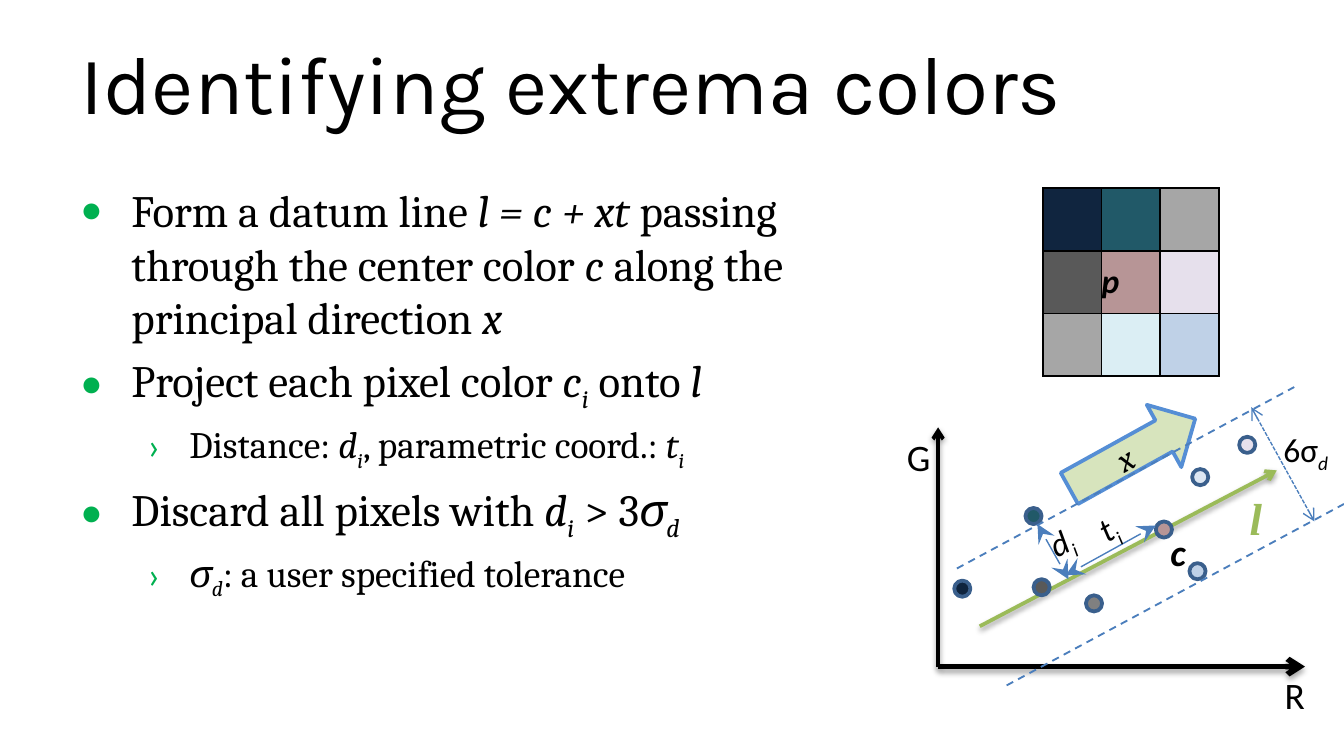
from lxml.etree import SubElement
from pptx import Presentation
from pptx.dml.color import RGBColor
from pptx.enum.dml import MSO_LINE as Dash
from pptx.enum.shapes import MSO_CONNECTOR as Connector, MSO_SHAPE as Shape
from pptx.enum.text import MSO_ANCHOR as Anchor, MSO_AUTO_SIZE as AutoSize, PP_ALIGN as Align
from pptx.oxml.ns import qn
from pptx.util import Inches, Pt

BLACK = RGBColor(0x00, 0x00, 0x00)
BULLET_GREEN = RGBColor(0x00, 0xB0, 0x50)
DATUM_GREEN = RGBColor(0x9B, 0xBB, 0x59)
ARROW_FILL = RGBColor(0xD7, 0xE4, 0xBD)
ARROW_EDGE = RGBColor(0x55, 0x8E, 0xD5)
DOT_EDGE = RGBColor(0x3A, 0x5F, 0x8C)
GUIDE_BLUE = RGBColor(0x4B, 0x7E, 0xBC)
NAVY = RGBColor(0x10, 0x25, 0x3F)
DEEP_NAVY = RGBColor(0x0F, 0x24, 0x3E)
TEAL = RGBColor(0x21, 0x59, 0x68)
SILVER = RGBColor(0xA6, 0xA6, 0xA6)
MID_GRAY = RGBColor(0x80, 0x80, 0x80)
DARK_GRAY = RGBColor(0x59, 0x59, 0x59)
ROSE = RGBColor(0xB7, 0x95, 0x96)
LILAC = RGBColor(0xE6, 0xE0, 0xEC)
AQUA = RGBColor(0xDB, 0xEE, 0xF4)
SKY = RGBColor(0xBF, 0xD1, 0xE7)
PALE_BLUE = RGBColor(0xDC, 0xE6, 0xF2)

# Run styles: regular, italic, italic subscript
REG, ITAL, SUB = "regular", "italic", "subscript"

# Indent, hanging indent, bullet and size for each outline level
LEVELS = [(0.38, -0.38, "•", 24), (0.81, -0.31, "›", 20)]
BULLETS = [
    (0, [("Form a datum line ", REG), ("l = c + xt", ITAL),
         (" passing through the center color ", REG), ("c", ITAL),
         (" along the principal direction ", REG), ("x", ITAL)]),
    (0, [("Project each pixel color ", REG), ("c", ITAL), ("i", SUB),
         (" onto ", REG), ("l", ITAL)]),
    (1, [("Distance: ", REG), ("d", ITAL), ("i", SUB),
         (", parametric coord.: ", REG), ("t", ITAL), ("i", SUB)]),
    (0, [("Discard all pixels with ", REG), ("d", ITAL), ("i", SUB),
         (" > 3", REG), ("σ", ITAL), ("d", SUB)]),
    (1, [("σ", ITAL), ("d", SUB), (": a user specified tolerance", REG)]),
]

PIXELS = [[NAVY, TEAL, SILVER], [DARK_GRAY, ROSE, LILAC], [SILVER, AQUA, SKY]]
DOT_SIZE = 0.12
COLOR_DOTS = [
    (8.6, 3.88, ROSE), (9.22, 3.25, LILAC), (8.87, 3.49, PALE_BLUE), (8.85, 4.19, SKY),
    (7.63, 3.78, TEAL), (7.1, 4.32, DEEP_NAVY), (7.69, 4.31, DARK_GRAY), (8.08, 4.43, MID_GRAY),
]


def box(*lengths):
    return [Inches(length) for length in lengths]


def write_runs(paragraph, runs, size, font="Calibri", color=BLACK, **formats):
    for text, style in runs:
        run = paragraph.add_run()
        run.text = text
        look = {"size": Pt(size), "name": font, "italic": style != REG, **formats}
        for key, value in look.items():
            setattr(run.font, key, value)
        run.font.color.rgb = color
        if style == SUB:
            run.font._element.set("baseline", "-25000")


def add_label(slide, place, runs, size, rotation=0, wrap=False, **formats):
    label = slide.shapes.add_textbox(*box(*place))
    label.rotation = rotation
    frame = label.text_frame
    frame.word_wrap = wrap
    frame.auto_size = AutoSize.SHAPE_TO_FIT_TEXT
    write_runs(frame.paragraphs[0], runs, size, **formats)


def add_title(slide, text):
    frame = slide.shapes.add_textbox(*box(0.5, 0.14, 9, 0.94)).text_frame
    frame.word_wrap = True
    frame.vertical_anchor = Anchor.MIDDLE
    write_runs(frame.paragraphs[0], [(text, REG)], 44, "Karla")


def add_bullets(slide):
    frame = slide.shapes.add_textbox(*box(0.5, 1.31, 6.15, 3.71)).text_frame
    frame.word_wrap = True
    for number, (level, runs) in enumerate(BULLETS):
        paragraph = frame.add_paragraph() if number else frame.paragraphs[0]
        indent, hanging, bullet, size = LEVELS[level]
        paragraph.level = level
        paragraph.space_before = Pt(size * 0.2)
        props = paragraph._p.get_or_add_pPr()
        props.set("marL", str(Inches(indent)))
        props.set("indent", str(Inches(hanging)))
        bullet_color = SubElement(props, qn("a:buClr"))
        SubElement(bullet_color, qn("a:srgbClr"), val=str(BULLET_GREEN))
        SubElement(props, qn("a:buFont"), typeface="Calibri")
        SubElement(props, qn("a:buChar"), char=bullet)
        write_runs(paragraph, runs, size, "Cambria")


def add_pixel_grid(slide):
    grid = slide.shapes.add_table(3, 3, *box(7.76, 1.4, 1.31, 1.4)).table
    for column in grid.columns:
        column.width = Inches(1.31 / 3)
    for row, colors in enumerate(PIXELS):
        for column, color in enumerate(colors):
            cell = grid.cell(row, column)
            cell.margin_left = cell.margin_right = cell.margin_top = cell.margin_bottom = 0
            cell.vertical_anchor = Anchor.MIDDLE
            props = cell._tc.get_or_add_tcPr()
            for side in ("lnL", "lnR", "lnT", "lnB"):
                border = SubElement(props, qn("a:" + side), w=str(Pt(1)))
                SubElement(SubElement(border, qn("a:solidFill")), qn("a:srgbClr"), val=str(BLACK))
            cell.fill.solid()
            cell.fill.fore_color.rgb = color
    write_runs(grid.cell(1, 1).text_frame.paragraphs[0], [("p", ITAL)], 18, bold=True)


def add_line(slide, start, end, color, width, dash=None, head=None, tail=None, shadow=None):
    line = slide.shapes.add_connector(Connector.STRAIGHT, *box(*start, *end))
    line.line.color.rgb = color
    line.line.width = Pt(width)
    if dash:
        line.line.dash_style = dash
    outline = line.line._get_or_add_ln()
    for tag, kind in (("a:headEnd", head), ("a:tailEnd", tail)):
        if kind:
            end_mark = SubElement(outline, qn(tag), type=kind)
            if kind == "stealth":
                end_mark.set("w", "lg")
                end_mark.set("len", "lg")
    effects = SubElement(line._element.spPr, qn("a:effectLst"))
    if shadow:
        opacity, distance = shadow
        cast = SubElement(effects, qn("a:outerShdw"), blurRad=str(Pt(3.1)),
                          dist=str(Pt(distance)), dir="5400000", rotWithShape="0")
        tint = SubElement(cast, qn("a:srgbClr"), val=str(BLACK))
        SubElement(tint, qn("a:alpha"), val=str(opacity * 1000))


def add_shape(slide, kind, place, fill, edge):
    shape = slide.shapes.add_shape(kind, *box(*place))
    shape.shadow.inherit = False
    shape.fill.solid()
    shape.fill.fore_color.rgb = fill
    shape.line.color.rgb = edge
    shape.line.width = Pt(2)
    return shape


def add_direction_arrow(slide):
    arrow = add_shape(slide, Shape.RIGHT_ARROW, (7.89, 3.11, 1.07, 0.53), ARROW_FILL, ARROW_EDGE)
    arrow.rotation = 331
    arrow.text_frame.vertical_anchor = Anchor.MIDDLE
    paragraph = arrow.text_frame.paragraphs[0]
    paragraph.alignment = Align.CENTER
    write_runs(paragraph, [("x", ITAL)], 18, "Cambria")


def add_color_plot(slide):
    # Datum line and axes
    origin = (6.98, 4.96)
    add_line(slide, (7.29, 4.66), (9.5, 3.5), DATUM_GREEN, 2, tail="arrow", shadow=(38, 1.6))
    add_line(slide, origin, (6.98, 3.18), BLACK, 2, tail="arrow", shadow=(38, 1.6))
    add_line(slide, origin, (9.71, 4.96), BLACK, 3, tail="arrow", shadow=(35, 1.8))

    # Pixel colors
    for left, top, color in COLOR_DOTS:
        add_shape(slide, Shape.OVAL, (left, top, DOT_SIZE, DOT_SIZE), color, DOT_EDGE)

    # Axis, center and datum labels
    add_label(slide, (9.46, 4.95, 0.35, 0.44), [("R", REG)], 20)
    add_label(slide, (6.65, 3.18, 0.38, 0.44), [("G", REG)], 20)
    add_label(slide, (8.61, 3.89, 0.24, 0.44), [("c", ITAL)], 20, wrap=True, bold=True)
    add_label(slide, (9.2, 3.6, 0.21, 0.36), [("l", ITAL)], 24,
              font="Times New Roman", color=DATUM_GREEN, bold=True)
    add_direction_arrow(slide)

    # Tolerance band
    for start, end in (((7.12, 4.23), (9.63, 2.88)), ((7.49, 5.1), (10, 3.75))):
        add_line(slide, start, end, GUIDE_BLUE, 1, Dash.DASH)
    add_line(slide, (9.31, 3.03), (9.78, 3.88), GUIDE_BLUE, 0.75, Dash.SQUARE_DOT, "arrow", "arrow")
    add_label(slide, (9.45, 3.14, 0.57, 0.4), [("6σ", REG), ("d", SUB)], 18)

    # Distance and parametric coordinate
    add_line(slide, (7.72, 3.9), (7.95, 4.31), GUIDE_BLUE, 0.75, head="stealth", tail="stealth")
    add_label(slide, (7.71, 3.82, 0.39, 0.4), [("d", ITAL), ("i", SUB)], 18, 332.8, wrap=True)
    add_line(slide, (7.93, 4.28), (8.6, 3.91), GUIDE_BLUE, 0.75, head="stealth", tail="stealth")
    add_label(slide, (8.08, 3.73, 0.32, 0.4), [("t", ITAL), ("i", SUB)], 18, 329.6)


def main():
    deck = Presentation()
    # Widescreen, 16:9
    deck.slide_width = Inches(10)
    deck.slide_height = Inches(10 * 9 / 16)
    slide = deck.slides.add_slide(deck.slide_layouts[6])
    add_title(slide, "Identifying extrema colors")
    add_bullets(slide)
    add_pixel_grid(slide)
    add_color_plot(slide)
    deck.save("out.pptx")


if __name__ == "__main__":
    main()
